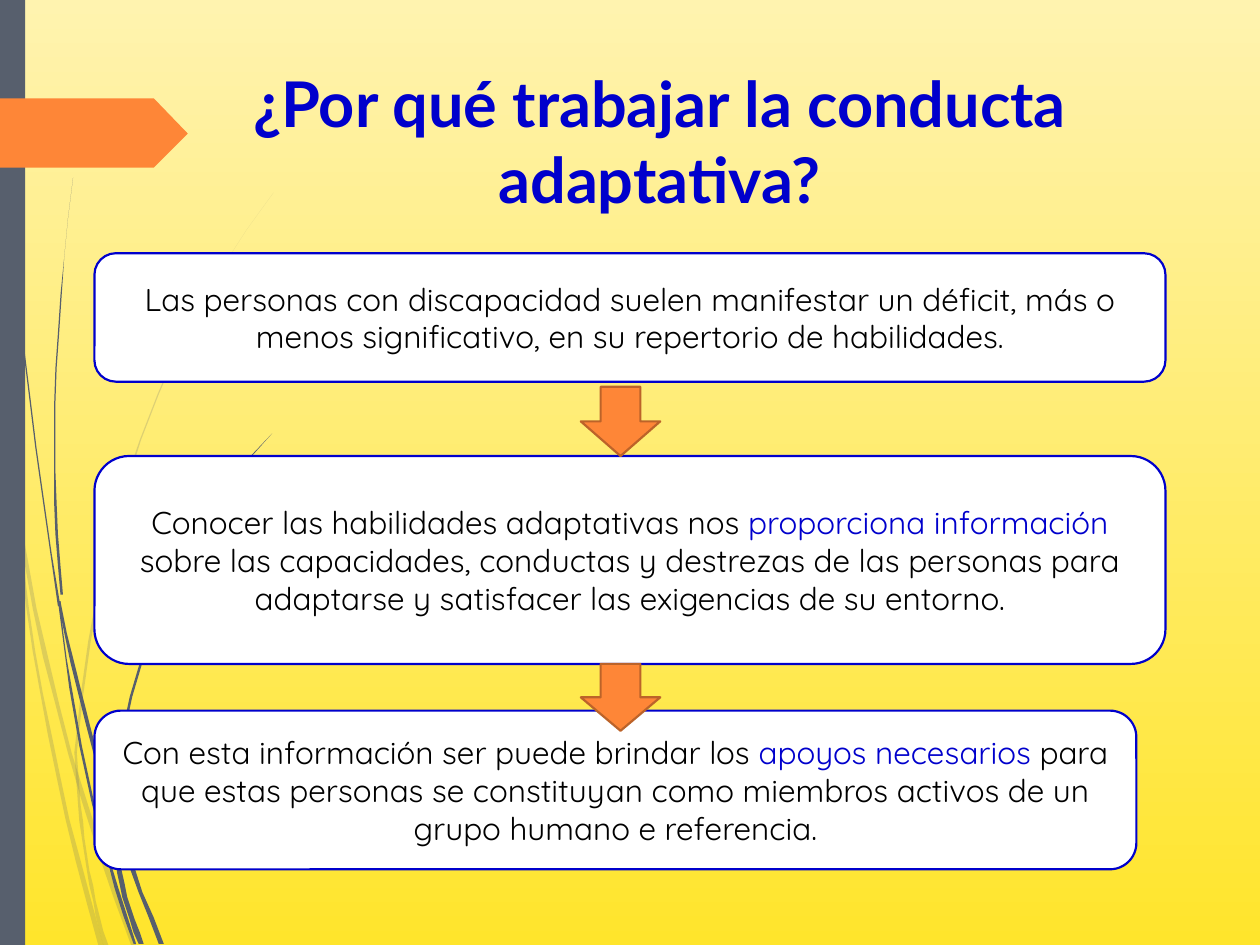
"""Build the slide on why adaptive behaviour is worth working on."""
from dataclasses import dataclass

from lxml import etree
from pptx import Presentation
from pptx.dml.color import RGBColor
from pptx.enum.shapes import MSO_SHAPE
from pptx.enum.text import MSO_ANCHOR, MSO_AUTO_SIZE, PP_ALIGN
from pptx.oxml.ns import qn
from pptx.shapes.autoshape import Shape
from pptx.slide import Slide
from pptx.text.text import TextFrame
from pptx.util import Pt

RECT = MSO_SHAPE.RECTANGLE
ROUND = MSO_SHAPE.ROUNDED_RECTANGLE
DOWN = MSO_SHAPE.DOWN_ARROW
MIDDLE = MSO_ANCHOR.MIDDLE
CENTER = PP_ALIGN.CENTER
FIXED = MSO_AUTO_SIZE.NONE

BLUE = RGBColor(0x00, 0x00, 0xCC)
BLACK = RGBColor(0x00, 0x00, 0x00)
WHITE = RGBColor(0xFF, 0xFF, 0xFF)
SLATE = RGBColor(0x57, 0x5F, 0x6D)
ORANGE = RGBColor(0xFE, 0x86, 0x37)
RUST = RGBColor(0xBC, 0x63, 0x29)
PALE = RGBColor(0xFF, 0xF3, 0xAF)
YELLOW = RGBColor(0xFF, 0xE5, 0x2C)

HEAD = {"name": "Lato", "size": Pt(36), "bold": True}
BODY = {"name": "Quicksand", "size": Pt(18), "bold": False}
GRID = Pt(0.72)
STEPS = 12
Point = tuple[float, float]
Run = tuple[str, RGBColor]


@dataclass
class Box:
    """Hold a shape's place in points."""
    left: float
    top: float
    width: float
    height: float


@dataclass
class Card:
    """Hold a text card's place and runs."""
    box: Box
    runs: list[Run]


@dataclass
class Blade:
    """Hold a tapered curve on the grid: ends, bend, widths."""
    start: Point
    bend: Point
    end: Point
    thin: float
    thick: float


CARDS = [
    Card(Box(54, 144.7, 612, 73.4), [
        ("Las personas con discapacidad suelen manifestar un déficit, más o "
         "menos significativo, en su repertorio de habilidades.", BLACK)]),
    Card(Box(54, 260.6, 612, 118.8), [
        ("Conocer las habilidades adaptativas nos ", BLACK),
        ("proporciona información ", BLUE),
        ("sobre las capacidades, conductas y destrezas de las personas para "
         "adaptarse y satisfacer las exigencias de su entorno.", BLACK)]),
    Card(Box(54, 406.1, 595.4, 90.7), [
        ("Con esta información ser puede brindar los ", BLACK),
        ("apoyos necesarios ", BLUE),
        ("para que estas personas se constituyan como miembros activos de un "
         "grupo humano e referencia.", BLACK)]),
]
ARROWS = [Box(331.9, 221, 45.4, 39.6), Box(331.9, 379.4, 45.4, 38.2)]
TAG = [(0, 78), (122, 78), (149, 105.5), (122, 133), (0, 133)]
FAINT = [
    Blade((0, 290), (19, 522), (106, 750), 3, 4),
    Blade((8, 350), (22, 550), (80, 750), 1, 4),
    Blade((217, 153), (84, 323), (60, 597), 0, 2),
    Blade((60, 597), (64, 683), (84, 750), 2, 3),
]
DARK = [
    Blade((2, 0), (5, 226), (47, 481), 1, 1),
    Blade((47, 477), (77, 627), (128, 749), 2, 4),
    Blade((47, 477), (61, 617), (107, 749), 1, 3),
    Blade((58, 141), (34, 334), (49, 472), 0, 2),
    Blade((216, 344), (107, 458), (90, 640), 0, 3),
    Blade((90, 640), (89, 692), (112, 749), 2, 5),
]


def paint(shape: Shape, fill: RGBColor, line: RGBColor | None = None) -> None:
    """Set a shape's fill and line and drop its shadow."""
    shape.shadow.inherit = False
    shape.fill.solid()
    shape.fill.fore_color.rgb = fill
    if line is None:
        shape.line.fill.background()
    else:
        shape.line.color.rgb = line
        shape.line.width = Pt(1.25)


def place(slide: Slide, kind: MSO_SHAPE, box: Box) -> Shape:
    """Add a preset shape."""
    return slide.shapes.add_shape(kind, Pt(box.left), Pt(box.top),
                                  Pt(box.width), Pt(box.height))


def trace(slide: Slide, points: list[Point], fill: RGBColor) -> Shape:
    """Add a closed outline drawn on the grid."""
    pen = slide.shapes.build_freeform(*points[0], scale=GRID)
    pen.add_line_segments(points[1:], close=True)
    shape = pen.convert_to_shape()
    paint(shape, fill)
    return shape


def sweep(blade: Blade) -> list[Point]:
    """Return the outline of a blade, down one side and up the other."""
    left, right = [], []
    for step in range(STEPS + 1):
        t = step / STEPS
        x, y = ((1 - t) ** 2 * a + 2 * t * (1 - t) * b + t * t * c
                for a, b, c in zip(blade.start, blade.bend, blade.end))
        half = (blade.thin + (blade.thick - blade.thin) * t) / 2
        left.append((max(x - half, 0), y))
        right.append((x + half, y))
    return left + right[::-1]


def grow(slide: Slide, blades: list[Blade], alpha: int) -> None:
    """Draw blades of grass at an opacity in percent."""
    for blade in blades:
        shape = trace(slide, sweep(blade), SLATE)
        tint = shape.element.spPr.find(f".//{qn('a:srgbClr')}")
        etree.SubElement(tint, qn("a:alpha"), val=str(alpha * 1000))


def write(frame: TextFrame, runs: list[Run], style: dict) -> None:
    """Write one centred paragraph of coloured runs."""
    frame.word_wrap = True
    frame.auto_size = FIXED
    frame.vertical_anchor = MIDDLE
    para = frame.paragraphs[0]
    para.alignment = CENTER
    for text, color in runs:
        run = para.add_run()
        run.text = text
        run.font.color.rgb = color
        for key, value in style.items():
            setattr(run.font, key, value)


def main() -> None:
    """Draw the slide and save it."""
    deck = Presentation()
    deck.slide_width, deck.slide_height = Pt(720), Pt(540)
    slide = deck.slides.add_slide(deck.slide_layouts[5])
    back = slide.background.fill
    back.gradient()
    back.gradient_angle = 270
    for stop, color in zip(back.gradient_stops, (PALE, YELLOW)):
        stop.color.rgb = color
    grow(slide, FAINT, 20)
    grow(slide, DARK, 100)
    paint(place(slide, RECT, Box(0, 0, 14.4, 540)), SLATE)
    trace(slide, TAG, ORANGE)
    for card in CARDS:
        shape = place(slide, ROUND, card.box)
        paint(shape, WHITE, BLUE)
        write(shape.text_frame, card.runs, BODY)
    for box in ARROWS:
        paint(place(slide, DOWN, box), ORANGE, RUST)
    title = slide.shapes.title
    title.left, title.top = Pt(93.6), Pt(31)
    title.width, title.height = Pt(566.6), Pt(98.6)
    write(title.text_frame,
          [("¿Por qué trabajar la conducta adaptativa?", BLUE)], HEAD)
    deck.save("out.pptx")


if __name__ == "__main__":
    main()
